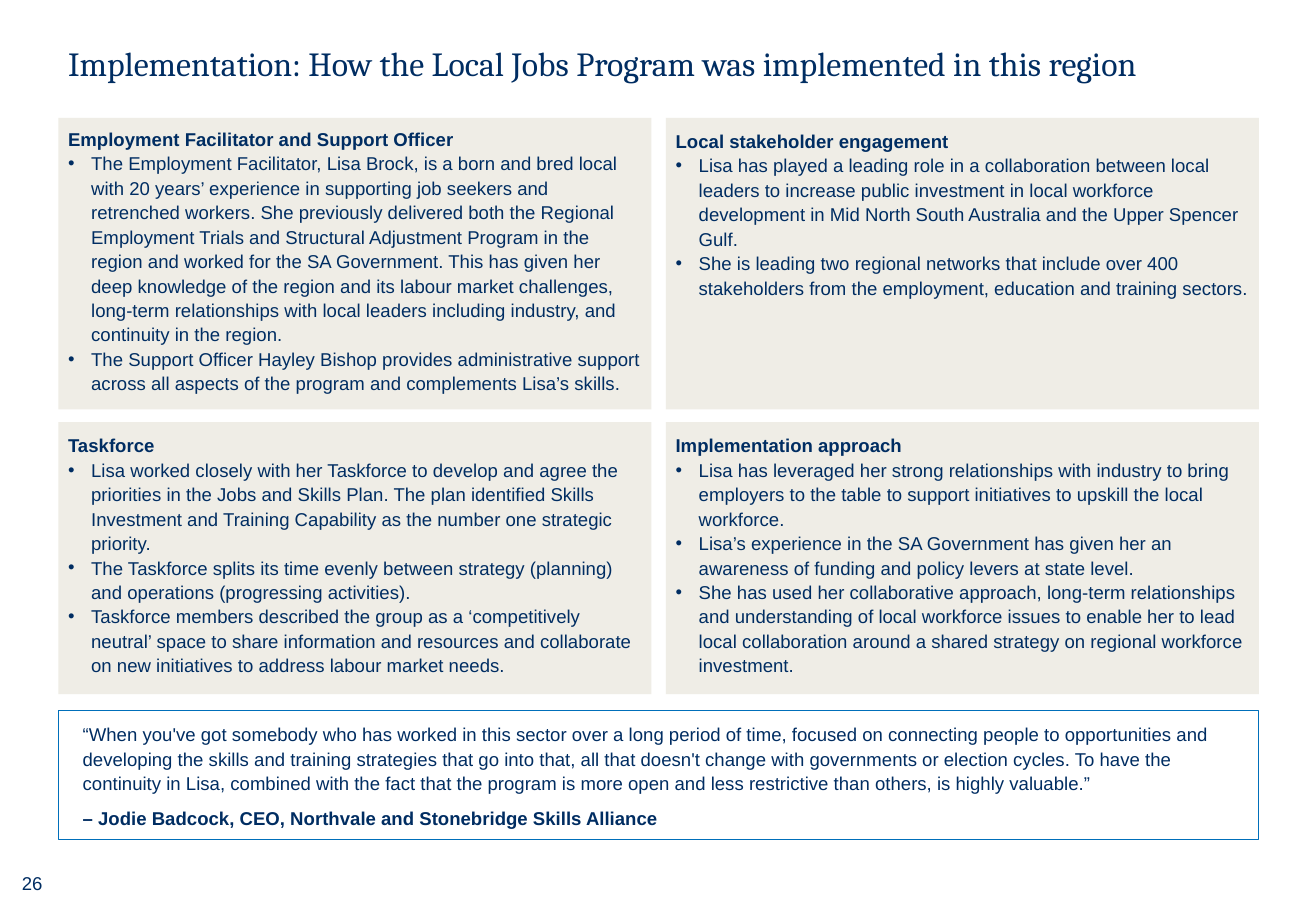
from dataclasses import dataclass

from lxml import etree
from pptx import Presentation
from pptx.dml.color import RGBColor
from pptx.enum.shapes import MSO_SHAPE
from pptx.enum.text import MSO_ANCHOR as Anchor, MSO_AUTO_SIZE as AutoSize, PP_ALIGN as Align
from pptx.oxml.ns import qn
from pptx.util import Inches, Pt


@dataclass(frozen=True)
class Theme:
    ink: str = "002D62"
    panel: str = "EFEDE6"
    paper: str = "FFFFFF"
    accent: str = "006FBA"
    heading_font: str = "Cambria"
    body_font: str = "Arial"
    title_size: int = 20
    body_size: int = 11
    line_spacing: float = 1.1
    inset: float = 0.08
    hanging: float = 0.19


@dataclass(frozen=True)
class Grid:
    """Two equal columns; each row is a (top, height) pair in inches."""
    left: float = 0.48
    width: float = 9.88
    gutter: float = 0.12
    rows: tuple = ((0.18, 0.67), (0.97, 2.4), (3.475, 2.24), (5.85, 1.06))

    def cell(self, row, column=0, span=1):
        column_width = (self.width - self.gutter) / 2
        left = self.left + column * (column_width + self.gutter)
        width = span * column_width + (span - 1) * self.gutter
        top, height = self.rows[row]
        return left, top, width, height


THEME = Theme()
GRID = Grid()
TITLE = "Implementation: How the Local Jobs Program was implemented in this region"
# (row, column, heading, heading line spacing, bullet points)
PANELS = [
    (1, 0, "Employment Facilitator and Support Officer", 1.0, [
        "The Employment Facilitator, Lisa Brock, is a born and bred local with 20 years’ experience in "
        "supporting job seekers and retrenched workers. She previously delivered both the Regional "
        "Employment Trials and Structural Adjustment Program in the region and worked for the SA "
        "Government. This has given her deep knowledge of the region and its labour market challenges, "
        "long-term relationships with local leaders including industry, and continuity in the region.",
        "The Support Officer Hayley Bishop provides administrative support across all aspects of the "
        "program and complements Lisa’s skills."]),
    (1, 1, "Local stakeholder engagement", THEME.line_spacing, [
        "Lisa has played a leading role in a collaboration between local leaders to increase public "
        "investment in local workforce development in Mid North South Australia and the Upper Spencer Gulf.",
        "She is leading two regional networks that include over 400 stakeholders from the employment, "
        "education and training sectors."]),
    (2, 0, "Taskforce", THEME.line_spacing, [
        "Lisa worked closely with her Taskforce to develop and agree the priorities in the Jobs and "
        "Skills Plan. The plan identified Skills Investment and Training Capability as the number one "
        "strategic priority.",
        "The Taskforce splits its time evenly between strategy (planning) and operations (progressing "
        "activities).",
        "Taskforce members described the group as a ‘competitively neutral’ space to share information "
        "and resources and collaborate on new initiatives to address labour market needs."]),
    (2, 1, "Implementation approach", THEME.line_spacing, [
        "Lisa has leveraged her strong relationships with industry to bring employers to the table to "
        "support initiatives to upskill the local workforce.",
        "Lisa’s experience in the SA Government has given her an awareness of funding and policy levers "
        "at state level.",
        "She has used her collaborative approach, long-term relationships and understanding of local "
        "workforce issues to enable her to lead local collaboration around a shared strategy on regional "
        "workforce investment."]),
]
QUOTE = ("“When you've got somebody who has worked in this sector over a long period of time, focused on "
         "connecting people to opportunities and developing the skills and training strategies that go into "
         "that, all that doesn't change with governments or election cycles. To have the continuity in Lisa, "
         "combined with the fact that the program is more open and less restrictive than others, is highly "
         "valuable.”")
SPEAKER = "– Jodie Badcock, CEO, Northvale and Stonebridge Skills Alliance"


def place(shape, box):
    shape.left, shape.top, shape.width, shape.height = map(Inches, box)


def set_frame(shape, anchor, across, down):
    frame = shape.text_frame
    frame.word_wrap = True
    frame.auto_size = AutoSize.NONE
    frame.vertical_anchor = anchor
    frame.margin_left = frame.margin_right = Inches(across)
    frame.margin_top = frame.margin_bottom = Inches(down)
    return frame


def set_bullet(paragraph, bulleted):
    """Give a hanging bullet, or clear the one inherited from the layout."""
    properties = paragraph._p.get_or_add_pPr()
    hanging = Inches(THEME.hanging) if bulleted else 0
    properties.set("marL", str(hanging))
    properties.set("indent", str(-hanging))
    if bulleted:
        colour = etree.SubElement(properties, qn("a:buClr"))
        etree.SubElement(colour, qn("a:srgbClr"), val=THEME.ink)
        etree.SubElement(properties, qn("a:buFont"), typeface=THEME.body_font)
        etree.SubElement(properties, qn("a:buChar"), char="•")
    else:
        etree.SubElement(properties, qn("a:buNone"))


def write(paragraph, text, bold=False, bulleted=False, spacing=THEME.line_spacing, after=0,
          align=Align.LEFT, name=THEME.body_font, size=THEME.body_size):
    paragraph.text = text
    set_bullet(paragraph, bulleted)
    paragraph.alignment = align
    paragraph.line_spacing = spacing
    paragraph.space_before = Pt(0)
    paragraph.space_after = Pt(after)
    font = paragraph.font
    font.name, font.size, font.bold = name, Pt(size), bold
    font.color.rgb = RGBColor.from_string(THEME.ink)


def fill_solid(shape, colour):
    shape.fill.solid()
    shape.fill.fore_color.rgb = RGBColor.from_string(colour)


def add_title(slide):
    title = slide.shapes.title
    place(title, GRID.cell(0, span=2))
    frame = set_frame(title, Anchor.MIDDLE, THEME.inset, THEME.inset)
    write(frame.paragraphs[0], TITLE, spacing=1.0, name=THEME.heading_font, size=THEME.title_size)


def fill_panel(placeholder, row, column, heading, heading_spacing, points):
    place(placeholder, GRID.cell(row, column))
    fill_solid(placeholder, THEME.panel)
    frame = set_frame(placeholder, Anchor.TOP, THEME.inset, THEME.inset)
    write(frame.paragraphs[0], heading, bold=True, spacing=heading_spacing)
    for point in points:
        write(frame.add_paragraph(), point, bulleted=True)


def add_quote(slide):
    quote = slide.shapes.add_shape(MSO_SHAPE.RECTANGLE, *map(Inches, GRID.cell(3, span=2)))
    quote.shadow.inherit = False
    fill_solid(quote, THEME.paper)
    quote.line.color.rgb = RGBColor.from_string(THEME.accent)
    quote.line.width = Pt(0.75)
    frame = set_frame(quote, Anchor.MIDDLE, 0.2, 0.24)
    write(frame.paragraphs[0], QUOTE, after=6)
    write(frame.add_paragraph(), SPEAKER, bold=True)


def add_page_number(slide, number):
    box = slide.shapes.add_textbox(*map(Inches, (0.08, 7.18, 0.27, 0.21)))
    frame = set_frame(box, Anchor.TOP, 0, 0)
    write(frame.paragraphs[0], str(number), spacing=1.0, align=Align.RIGHT)


def main():
    presentation = Presentation()
    presentation.slide_width, presentation.slide_height = Inches(10.83), Inches(7.5)
    comparison_layout = presentation.slide_layouts[4]
    slide = presentation.slides.add_slide(comparison_layout)
    title, *bodies = slide.placeholders
    add_title(slide)
    for body, panel in zip(bodies, PANELS):
        fill_panel(body, *panel)
    add_quote(slide)
    add_page_number(slide, 26)
    presentation.save("out.pptx")


if __name__ == "__main__":
    main()
